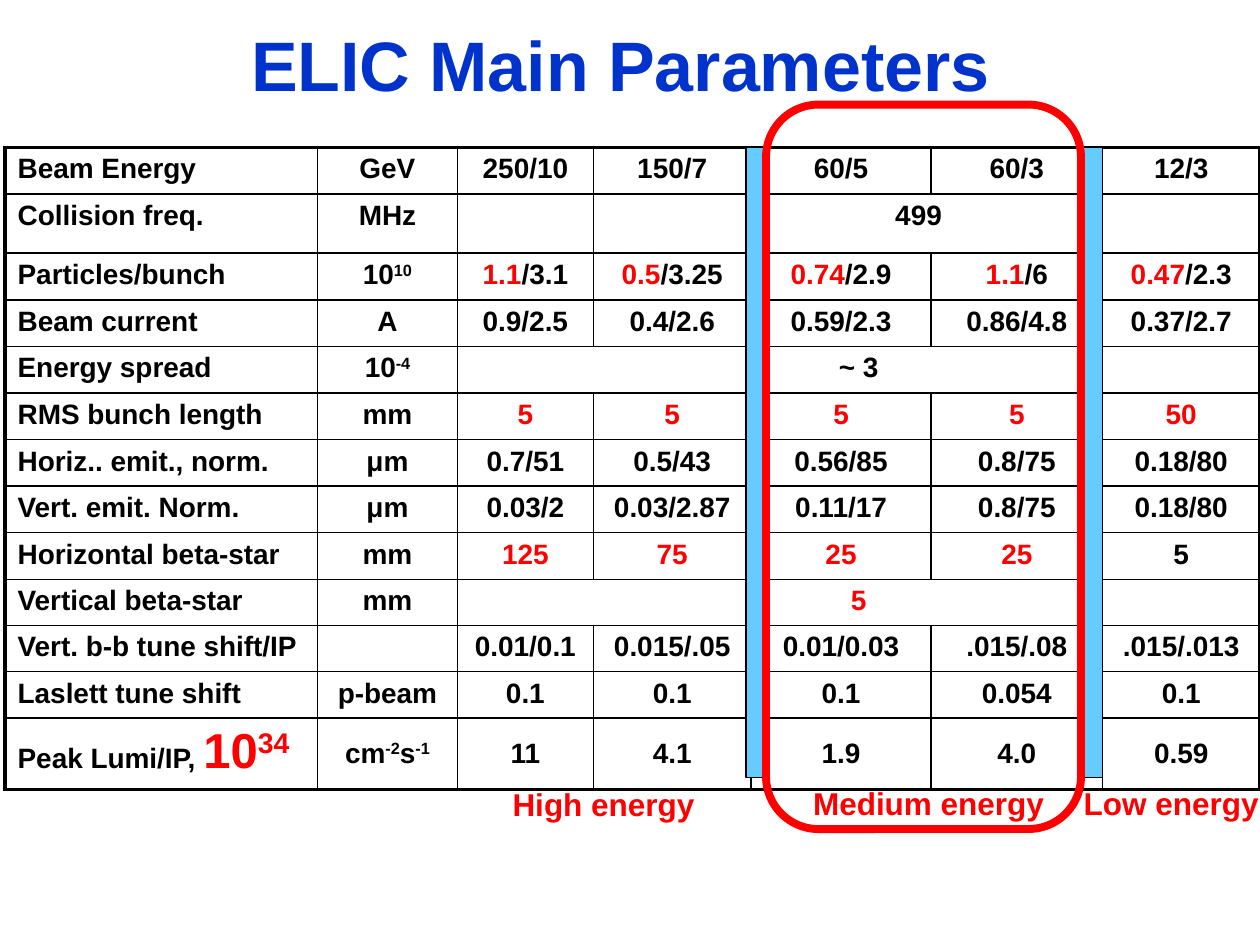
from lxml.etree import SubElement
from pptx import Presentation
from pptx.dml.color import RGBColor
from pptx.enum.shapes import MSO_SHAPE as SHAPE
from pptx.enum.text import MSO_ANCHOR as ANCHOR, PP_ALIGN as ALIGN
from pptx.oxml.ns import qn
from pptx.util import Inches, Pt

W, H = 10, 7.5
FONT = "Arial"
BLACK, RED, BLUE, SKY = "000000", "FF0000", "0033CC", "66CCFF"
THIN, THICK = 1, 2.25
LEFT, TOP, TABLE_H = 0.04, 1.17, 5
COLS = [2.48, 1.11, 1.08, 1.25, 1.43, 1.23, 0.13, 1.25]
ROWS = [0.37, 0.47] + [0.37] * 7 + [0.35] * 3 + [0.53]

# Marks before a run: * red, ^ superscript, # large
DATA = [
    ["Beam Energy", "GeV", "250/10", "150/7", "60/5", "60/3", None, "12/3"],
    ["Collision freq.", "MHz", "", "", "499", None, "", None],
    ["Particles/bunch", "10|^10", "*1.1|/3.1", "*0.5|/3.25", "*0.74|/2.9", "*1.1|/6", None, "*0.47|/2.3"],
    ["Beam current", "A", "0.9/2.5", "0.4/2.6", "0.59/2.3", "0.86/4.8", None, "0.37/2.7"],
    ["Energy spread", "10|^-4", "~ 3"] + [None] * 5,
    ["RMS bunch length", "mm", "*5", "*5", "*5", "*5", None, "*50"],
    ["Horiz.. emit., norm.", "μm", "0.7/51", "0.5/43", "0.56/85", "0.8/75", None, "0.18/80"],
    ["Vert. emit. Norm.", "μm", "0.03/2", "0.03/2.87", "0.11/17", "0.8/75", None, "0.18/80"],
    ["Horizontal beta-star", "mm", "*125", "*75", "*25", "*25", None, "5"],
    ["Vertical beta-star", "mm", "*5"] + [None] * 5,
    ["Vert. b-b tune shift/IP", "", "0.01/0.1", "0.015/.05", "0.01/0.03", ".015/.08", None, ".015/.013"],
    ["Laslett tune shift", "p-beam", "0.1", "0.1", "0.1", "0.054", None, "0.1"],
    ["Peak Lumi/IP, |*#10|*#^34", "cm|^-2|s|^-1", "11", "4.1", "1.9", "4.0", None, "0.59"],
]


def rgb(value):
    return RGBColor.from_string(value)


def style(p, size, color, align):
    p.alignment = align
    f = p.font
    f.name, f.size, f.bold = FONT, Pt(size), True
    f.color.rgb = rgb(color)


def add_runs(p, marked):
    for part in marked.split("|"):
        text = part.lstrip("*#^")
        marks = part[:len(part) - len(text)]
        r = p.add_run()
        r.text = text
        if "*" in marks:
            r.font.color.rgb = rgb(RED)
        if "#" in marks:
            r.font.size = Pt(28)
        if "^" in marks:
            r._r.get_or_add_rPr().set("baseline", "30000")


def add_label(s, text, box, size, color, anchor=ANCHOR.TOP):
    tf = s.shapes.add_textbox(*map(Inches, box)).text_frame
    tf.word_wrap = True
    tf.vertical_anchor = anchor
    p = tf.paragraphs[0]
    p.text = text
    style(p, size, color, ALIGN.CENTER)


def add_box(s, kind, box, line, width, fill=None):
    sp = s.shapes.add_shape(kind, *map(Inches, box))
    sp.shadow.inherit = False
    if fill:
        sp.fill.solid()
        sp.fill.fore_color.rgb = rgb(fill)
    else:
        sp.fill.background()
    sp.line.color.rgb = rgb(line)
    sp.line.width = Pt(width)


def set_borders(cell, widths):
    tcPr = cell._tc.get_or_add_tcPr()
    for i, (side, width) in enumerate(zip("LRTB", widths)):
        ln = tcPr.makeelement(qn(f"a:ln{side}"), {"w": str(Pt(width))})
        fill = SubElement(ln, qn("a:solidFill"))
        SubElement(fill, qn("a:srgbClr"), val=BLACK)
        tcPr.insert(i, ln)


def fill_cell(cell, text, row, col):
    p = cell.text_frame.paragraphs[0]
    style(p, 16, BLACK, ALIGN.CENTER if col else ALIGN.LEFT)
    if text:
        add_runs(p, text)
    else:
        p._p.get_or_add_endParaRPr().set("sz", "1600")
    if col and row == len(ROWS) - 1:
        cell.vertical_anchor = ANCHOR.MIDDLE


def add_parameters(s):
    frame = s.shapes.add_table(len(ROWS), len(COLS), Inches(LEFT), Inches(TOP),
                               Inches(sum(COLS)), Inches(sum(ROWS)))
    table = frame.table
    table.first_row = table.horz_banding = False
    for column, width in zip(table.columns, COLS):
        column.width = Inches(width)
    for row, height in zip(table.rows, ROWS):
        row.height = Inches(height)
    for i, values in enumerate(DATA):
        for j, text in enumerate(values):
            cell = table.cell(i, j)
            cell.fill.background()
            end = j
            while end + 1 < len(COLS) and values[end + 1] is None:
                end += 1
            edges = (j == 0, end == len(COLS) - 1, i == 0, i == len(ROWS) - 1)
            set_borders(cell, [THICK if edge else THIN for edge in edges])
            if text is None:
                continue
            if end > j:
                cell.merge(table.cell(i, end))
            fill_cell(cell, text, i, j)


def main():
    prs = Presentation()
    prs.slide_width, prs.slide_height = Inches(W), Inches(H)
    s = prs.slides.add_slide(prs.slide_layouts[6])
    add_label(s, "ELIC Main Parameters ", (0, 0.17, W, 0.67), 40, BLUE, ANCHOR.MIDDLE)
    add_parameters(s)
    for x in (5.92, 8.58):
        add_box(s, SHAPE.RECTANGLE, (x, TOP, 0.17, TABLE_H), BLACK, 0.75, SKY)
    for text, x, y, width in (("High energy", 3.75, 6.18, 2.08),
                              ("Medium energy", 6.33, 6.17, 2.08),
                              ("Low energy", 8.42, 6.17, 1.75)):
        add_label(s, text, (x, y, width, 0.4), 18, RED)
    add_box(s, SHAPE.ROUNDED_RECTANGLE, (6.08, 0.83, 2.5, 5.75), RED, 4.5)
    prs.save("out.pptx")


if __name__ == "__main__":
    main()
